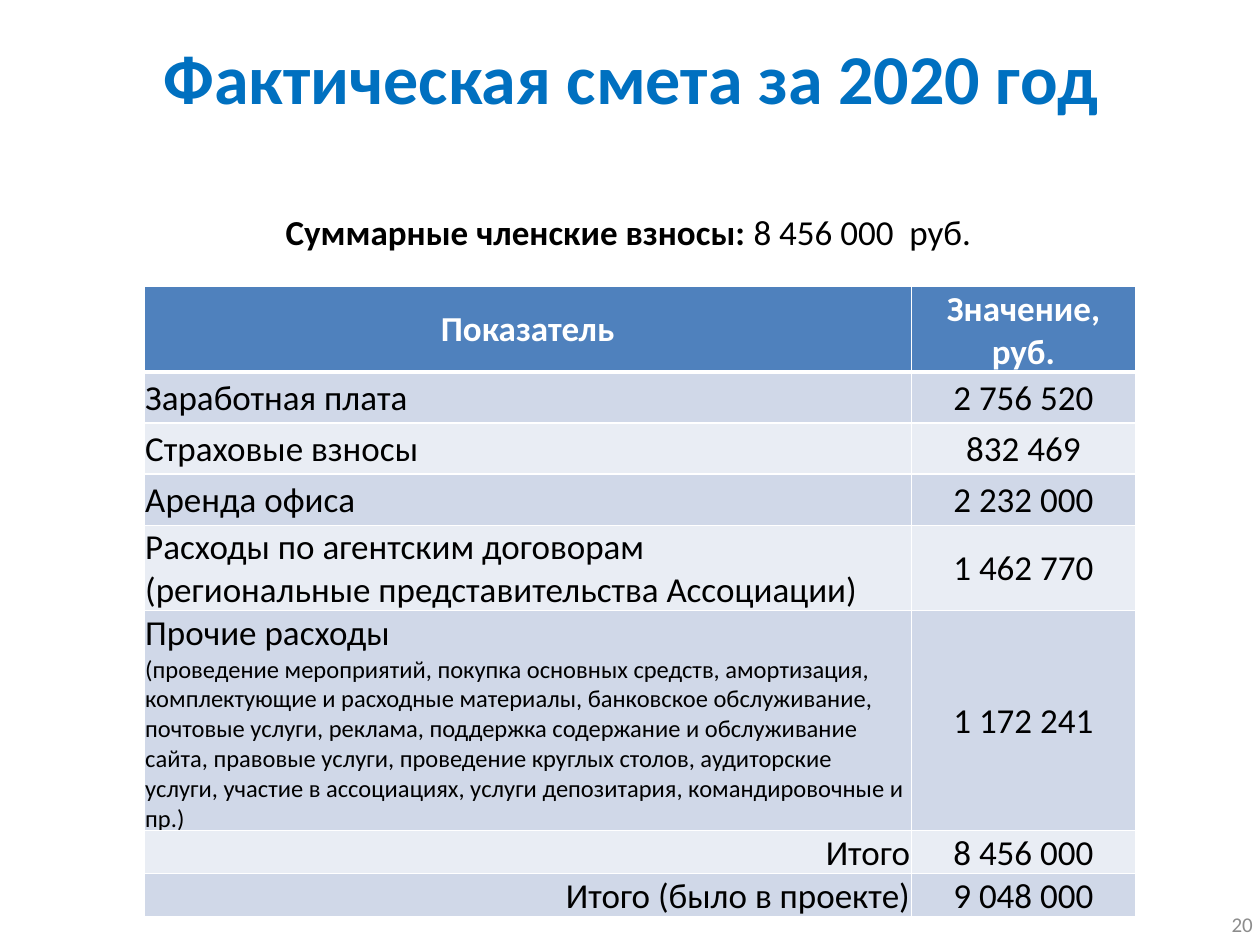
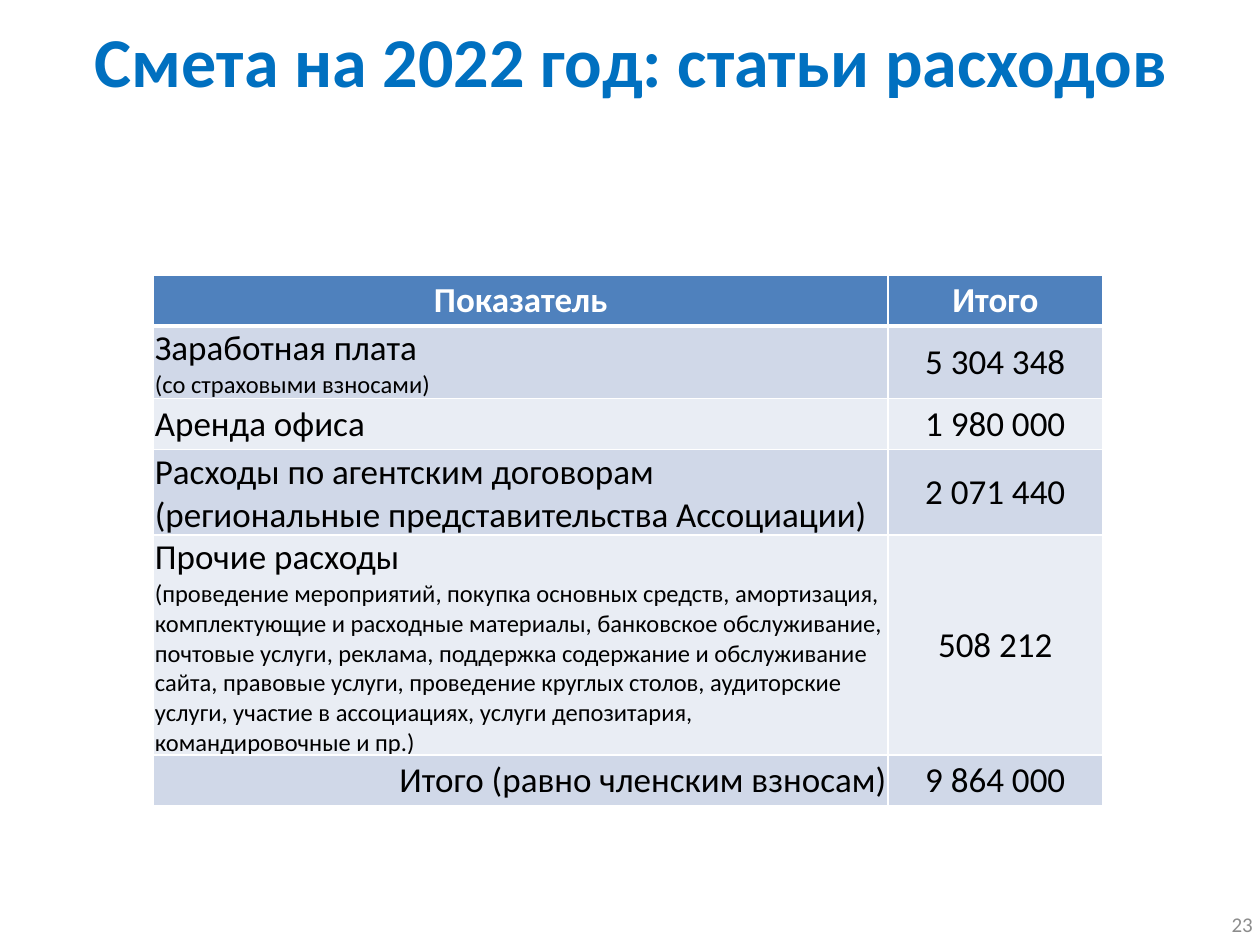
from lxml.etree import SubElement
from pptx import Presentation
from pptx.dml.color import RGBColor
from pptx.enum.text import MSO_ANCHOR, PP_ALIGN
from pptx.oxml.ns import qn
from pptx.util import Pt

FONT = "Calibri"
BLUE, HEADER, WHITE, BLACK, GREY = "0070C0", "4F81BD", "FFFFFF", "000000", "8C8C8C"
BANDS = ("D0D8E8", "E9EDF4")
LEFT, CENTER, RIGHT = PP_ALIGN.LEFT, PP_ALIGN.CENTER, PP_ALIGN.RIGHT
BODY_SIZE, DETAIL_SIZE = 20, 14
ROW_HEIGHT = 29.2

# A label is a list of (text, size) paragraphs.
AGENTS = [("Расходы по агентским договорам", BODY_SIZE),
          ("(региональные представительства Ассоциации)", BODY_SIZE)]
OTHER = [("Прочие расходы", BODY_SIZE),
         ("(проведение мероприятий, покупка основных средств, амортизация, "
          "комплектующие и расходные материалы, банковское обслуживание, "
          "почтовые услуги, реклама, поддержка содержание и обслуживание сайта, "
          "правовые услуги, проведение круглых столов, аудиторские услуги, "
          "участие в ассоциациях, услуги депозитария, командировочные и пр.)", DETAIL_SIZE)]
SALARY = ("Заработная плата", BODY_SIZE)
RENT = [("Аренда офиса", BODY_SIZE)]

SLIDES = [
    dict(title="Фактическая смета за 2020 год", title_height=90, number="20",
         fees=("Суммарные членские взносы: ", "8 456 000  руб."),
         origin=(82.3, 163.8), widths=(438.5, 128.2), total_height=14.4,
         header=("Показатель", "Значение, руб."),
         items=[([SALARY], "2 756 520"),
                ([("Страховые взносы", BODY_SIZE)], "832 469"),
                (RENT, "2 232 000"),
                (AGENTS, "1 462 770"),
                (OTHER, "1 172 241")],
         totals=[("Итого", "8 456 000"), ("Итого (было в проекте)", "9 048 000")]),
    dict(title="Смета на 2022 год: статьи расходов", title_height=70.6, number="23",
         fees=None,
         origin=(87.8, 157), widths=(419.6, 122.8), total_height=ROW_HEIGHT,
         header=("Показатель", "Итого"),
         items=[([SALARY, ("(со страховыми взносами)", DETAIL_SIZE)], "5 304 348"),
                (RENT, "1 980 000"),
                (AGENTS, "2 071 440"),
                (OTHER, "508 212")],
         totals=[("Итого (равно членским взносам)", "9 864 000")]),
]


def rgb(color):
    return RGBColor.from_string(color)


def add_run(p, text, size=BODY_SIZE, color=BLACK, bold=False, align=LEFT):
    p.alignment = align
    r = p.add_run()
    r.text = text
    r.font.name, r.font.size, r.font.bold = FONT, Pt(size), bold
    r.font.color.rgb = rgb(color)


def add_box(s, left, top, width, height, anchor=MSO_ANCHOR.MIDDLE):
    """Add a wrapping text box and return its first paragraph."""
    tf = s.shapes.add_textbox(Pt(left), Pt(top), Pt(width), Pt(height)).text_frame
    tf.word_wrap = True
    tf.vertical_anchor = anchor
    return tf.paragraphs[0]


def set_borders(cell, bottom):
    tc_pr = cell._tc.get_or_add_tcPr()
    sides = (("a:lnL", 1), ("a:lnR", 1), ("a:lnT", 1), ("a:lnB", bottom))
    for i, (tag, width) in enumerate(sides):
        ln = SubElement(tc_pr, qn(tag), w=str(Pt(width)))
        fill = SubElement(ln, qn("a:solidFill"))
        SubElement(fill, qn("a:srgbClr"), val=WHITE)
        tc_pr.insert(i, ln)  # borders must precede the cell fill


def fill_cell(cell, paragraphs, fill, bottom=1, **fmt):
    cell.margin_left = cell.margin_right = cell.margin_top = Pt(0.72)
    cell.margin_bottom = Pt(0)
    cell.vertical_anchor = MSO_ANCHOR.MIDDLE
    cell.fill.solid()
    cell.fill.fore_color.rgb = rgb(fill)
    set_borders(cell, bottom)
    tf = cell.text_frame
    for i, (text, size) in enumerate(paragraphs):
        p = tf.add_paragraph() if i else tf.paragraphs[0]
        add_run(p, text, size=size, **fmt)


def add_budget(s, data):
    items, totals = data["items"], data["totals"]
    rows = [(label, value, LEFT, ROW_HEIGHT) for label, value in items]
    rows += [([(label, BODY_SIZE)], value, RIGHT, data["total_height"])
             for label, value in totals]
    left, top = data["origin"]
    height = ROW_HEIGHT + sum(row[-1] for row in rows)
    table = s.shapes.add_table(len(rows) + 1, 2, Pt(left), Pt(top),
                               Pt(sum(data["widths"])), Pt(height)).table
    table.horz_banding = False
    for column, width in zip(table.columns, data["widths"]):
        column.width = Pt(width)
    table.rows[0].height = Pt(ROW_HEIGHT)
    for col, text in enumerate(data["header"]):
        fill_cell(table.cell(0, col), [(text, BODY_SIZE)], HEADER, bottom=3,
                  color=WHITE, bold=True, align=CENTER)
    for i, (label, value, align, row_height) in enumerate(rows):
        band = BANDS[i % 2]
        table.rows[i + 1].height = Pt(row_height)
        fill_cell(table.cell(i + 1, 0), label, band, align=align)
        fill_cell(table.cell(i + 1, 1), [(value, BODY_SIZE)], band, align=CENTER)


def add_budget_slide(prs, data):
    s = prs.slides.add_slide(prs.slide_layouts[6])
    add_run(add_box(s, 555, 513.4, 168, 28.8), data["number"],
            size=12, color=GREY, align=RIGHT)
    add_run(add_box(s, 0, -1.4, 721.4, data["title_height"]), data["title"],
            size=40, color=BLUE, bold=True, align=CENTER)
    if data["fees"]:
        label, amount = data["fees"]
        p = add_box(s, 156.2, 116.6, 436.3, 31.5, anchor=MSO_ANCHOR.TOP)
        add_run(p, label, bold=True)
        add_run(p, amount)
    add_budget(s, data)


def main():
    prs = Presentation()
    prs.slide_width, prs.slide_height = Pt(720), Pt(540)
    for data in SLIDES:
        add_budget_slide(prs, data)
    prs.save("out.pptx")


if __name__ == "__main__":
    main()
